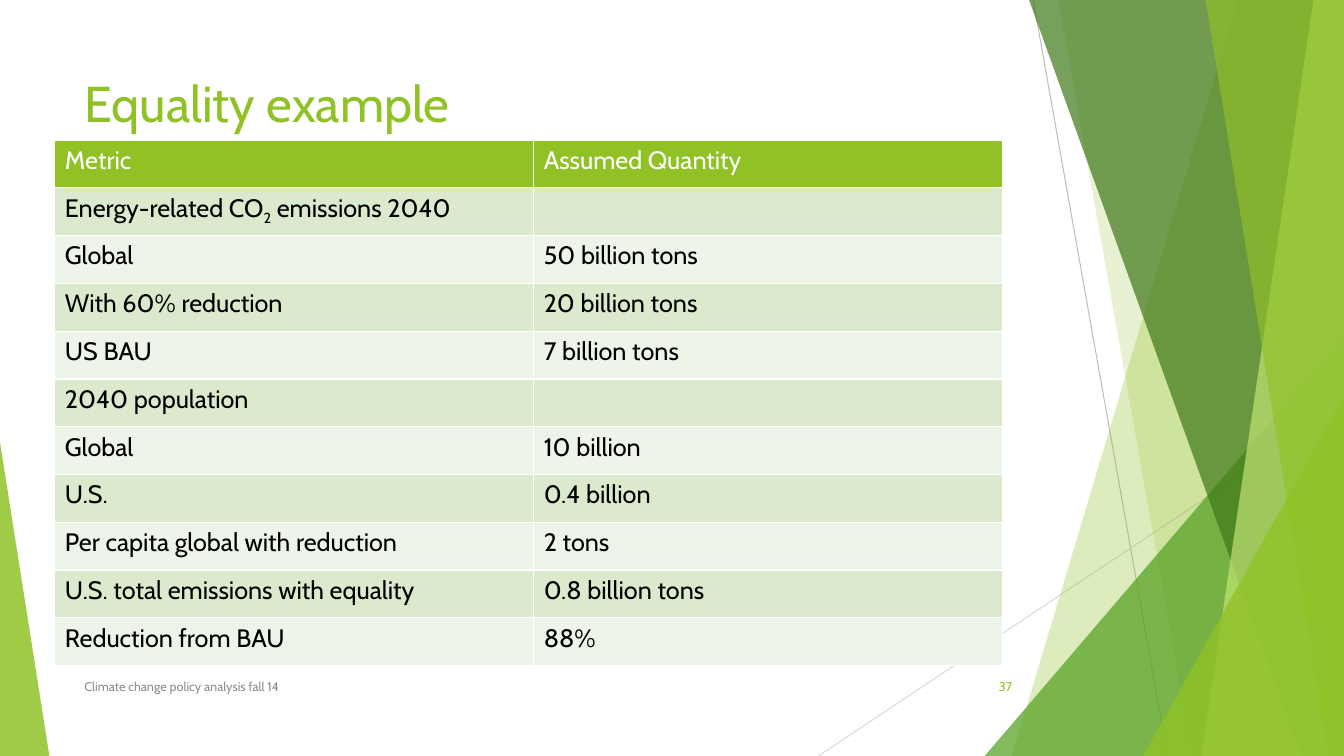
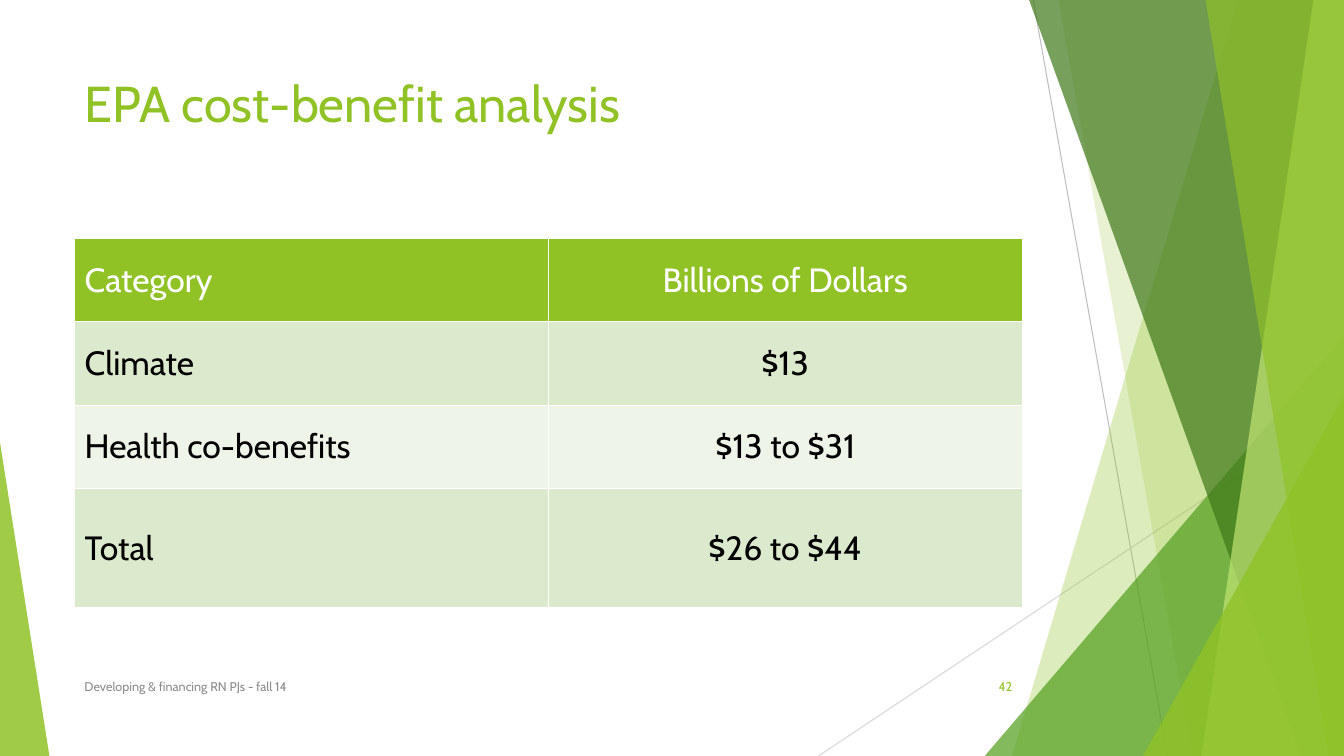
from lxml.etree import SubElement
from pptx import Presentation
from pptx.dml.color import RGBColor
from pptx.enum.shapes import MSO_CONNECTOR as Connector, MSO_SHAPE as Shape
from pptx.enum.text import MSO_ANCHOR as Anchor, PP_ALIGN as Align
from pptx.oxml.ns import qn
from pptx.util import Pt

SLIDES = [
    {
        "title": "Equality example",
        "footer": "Climate change policy analysis fall 14",
        "number": "37",
        "rows": [
            ("Metric", "Assumed Quantity"),
            (("Energy-related CO", "2", " emissions 2040"), ""),
            ("Global", "50 billion tons"),
            ("With 60% reduction", "20 billion tons"),
            ("US BAU", "7 billion tons"),
            ("2040 population", ""),
            ("Global", "10 billion"),
            ("U.S.", "0.4 billion"),
            ("Per capita global with reduction", "2 tons"),
            ("U.S. total emissions with equality", "0.8 billion tons"),
            ("Reduction from BAU", "88%"),
        ],
        "origin": (39.2, 100),
        "widths": (342, 334.8),
        "heights": [34.15] * 11,
        "size": 18,
        "anchor": Anchor.TOP,
        "aligns": (Align.LEFT, Align.LEFT),
    },
    {
        "title": "EPA cost-benefit analysis",
        "footer": "Developing & financing RN PJs - fall 14",
        "number": "42",
        "rows": [
            ("Category", "Billions of Dollars"),
            ("Climate", "$13"),
            ("Health co-benefits", "$13 to $31"),
            ("Total", "$26 to $44"),
        ],
        "origin": (53.3, 170.3),
        "widths": (338.4, 338.4),
        "heights": [59.6] * 3 + [84.8],
        "size": 24,
        "anchor": Anchor.MIDDLE,
        "aligns": (Align.LEFT, Align.CENTER),
    },
]

FONT = "Cabin"
WIDTH, HEIGHT = 960, 540
COLORS = {
    "lime": "90C226", "green": "54A021", "forest": "3F7819", "pale": "C0E474",
    "band": "DBE9CD", "light band": "EEF4E8", "white": "FFFFFF", "black": "000000",
    "grey": "8C8C8C", "line": "BFBFBF", "light line": "D9D9D9",
}
LINES = [((738, 0), (834, HEIGHT), "line"), ((WIDTH, 290), (584.6, HEIGHT), "light line")]
SHARDS = [
    ("band", 884.2, 722.9, "lime", 30),
    ("band", 756, 851.8, "lime", 20),
    ("triangle", (703.4, 240, WIDTH - 703.4), 1, "green", 72),
    ("band", 735.1, 929.5, "forest", 70),
    ("band", 938.2, 858.2, "pale", 70),
    ("band", 861.1, 949, "lime", 65),
    ("triangle", (816.5, 283, WIDTH - 816.5), 1, "lime", 80),
    ("triangle", (0, 316, 35.3), 0, "lime", 85),
]


def rgb(name):
    return RGBColor.from_string(COLORS[name])


def write_text(frame, text, size=18, color="black", align=Align.LEFT):
    paragraph = frame.paragraphs[0]
    paragraph.alignment = align
    parts = (text,) if isinstance(text, str) else text
    for index, part in enumerate(parts):
        run = paragraph.add_run()
        run.text = part
        font = run.font
        font.name, font.size, font.bold = FONT, Pt(size), False
        font.color.rgb = rgb(color)
        if index % 2:
            run._r.get_or_add_rPr().set("baseline", "-25000")


def add_text(slide, box, text, anchor=Anchor.MIDDLE, **style):
    frame = slide.shapes.add_textbox(*map(Pt, box)).text_frame
    frame.word_wrap = True
    frame.vertical_anchor = anchor
    write_text(frame, text, **style)


def add_line(slide, start, end, color):
    line = slide.shapes.add_connector(Connector.STRAIGHT, *map(Pt, start + end))
    line.line.color.rgb = rgb(color)
    line.line.width = Pt(0.75)
    SubElement(line._element.spPr, qn("a:effectLst"))


def add_band(slide, top_x, bottom_x):
    points = [(top_x, 0), (WIDTH, 0), (WIDTH, HEIGHT), (bottom_x, HEIGHT)]
    corners = [(Pt(x), Pt(y)) for x, y in points]
    builder = slide.shapes.build_freeform(*corners[0])
    builder.add_line_segments(corners[1:], close=True)
    return builder.convert_to_shape()


def add_triangle(slide, place, apex):
    left, top, width = place
    shape = slide.shapes.add_shape(
        Shape.ISOSCELES_TRIANGLE, Pt(left), Pt(top), Pt(width), Pt(HEIGHT - top))
    shape.adjustments[0] = apex
    return shape


def add_backdrop(slide):
    for line in LINES:
        add_line(slide, *line)
    builders = {"band": add_band, "triangle": add_triangle}
    for kind, first, second, color, opacity in SHARDS:
        shape = builders[kind](slide, first, second)
        shape.shadow.inherit = False
        shape.line.fill.background()
        shape.fill.solid()
        shape.fill.fore_color.rgb = rgb(color)
        color_node = shape._element.spPr.find(".//" + qn("a:srgbClr"))
        SubElement(color_node, qn("a:alpha"), val=str(opacity * 1000))


def style_cell(cell, color):
    properties = cell._tc.get_or_add_tcPr()
    for side in "LRTB":
        border = SubElement(properties, qn(f"a:ln{side}"), w=str(Pt(1)))
        fill = SubElement(border, qn("a:solidFill"))
        SubElement(fill, qn("a:srgbClr"), val=COLORS["white"])
    cell.fill.solid()
    cell.fill.fore_color.rgb = rgb(color)


def add_grid(slide, content):
    rows, widths, heights = content["rows"], content["widths"], content["heights"]
    box = (*content["origin"], sum(widths), sum(heights))
    table = slide.shapes.add_table(len(rows), len(widths), *map(Pt, box)).table
    table.first_row = table.horz_banding = False
    for column, width in zip(table.columns, widths):
        column.width = Pt(width)
    for index, (row, height, texts) in enumerate(zip(table.rows, heights, rows)):
        row.height = Pt(height)
        fill = "lime" if index == 0 else "band" if index % 2 else "light band"
        for cell, text, align in zip(row.cells, texts, content["aligns"]):
            style_cell(cell, fill)
            cell.vertical_anchor = content["anchor"]
            if text:
                write_text(cell.text_frame, text, size=content["size"], align=align,
                           color="black" if index else "white")


def add_slide(presentation, content):
    slide = presentation.slides.add_slide(presentation.slide_layouts[6])
    add_backdrop(slide)
    add_text(slide, (53.3, 48, 676.8, 104), content["title"],
             anchor=Anchor.TOP, size=36, color="lime")
    add_grid(slide, content)
    add_text(slide, (53.3, 475.7, 496, 28.8), content["footer"], size=9, color="grey")
    add_text(slide, (676.3, 475.7, 53.8, 28.8), content["number"],
             size=9, color="lime", align=Align.RIGHT)


def main():
    presentation = Presentation()
    presentation.slide_width, presentation.slide_height = Pt(WIDTH), Pt(HEIGHT)
    for content in SLIDES:
        add_slide(presentation, content)
    presentation.save("out.pptx")


if __name__ == "__main__":
    main()
